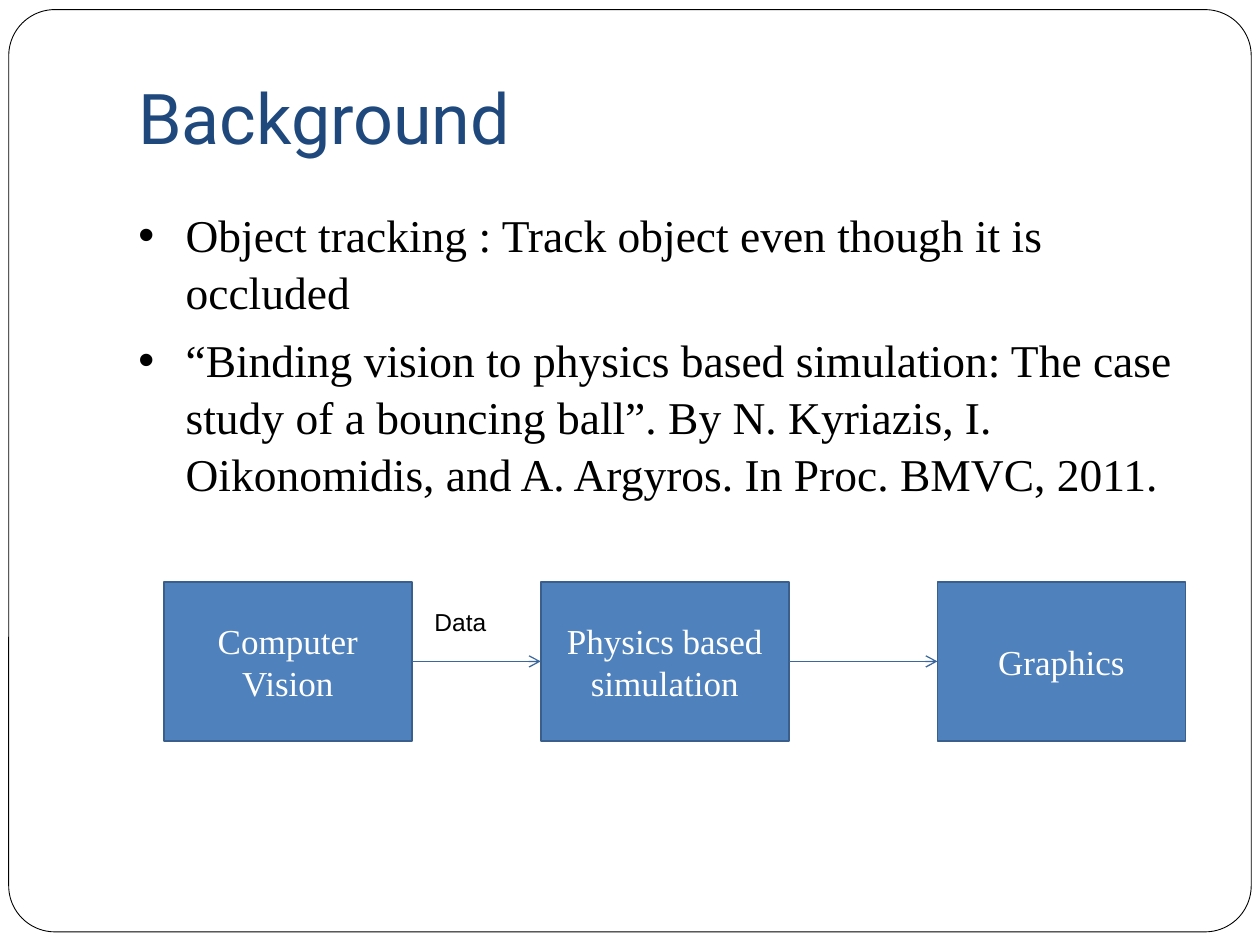
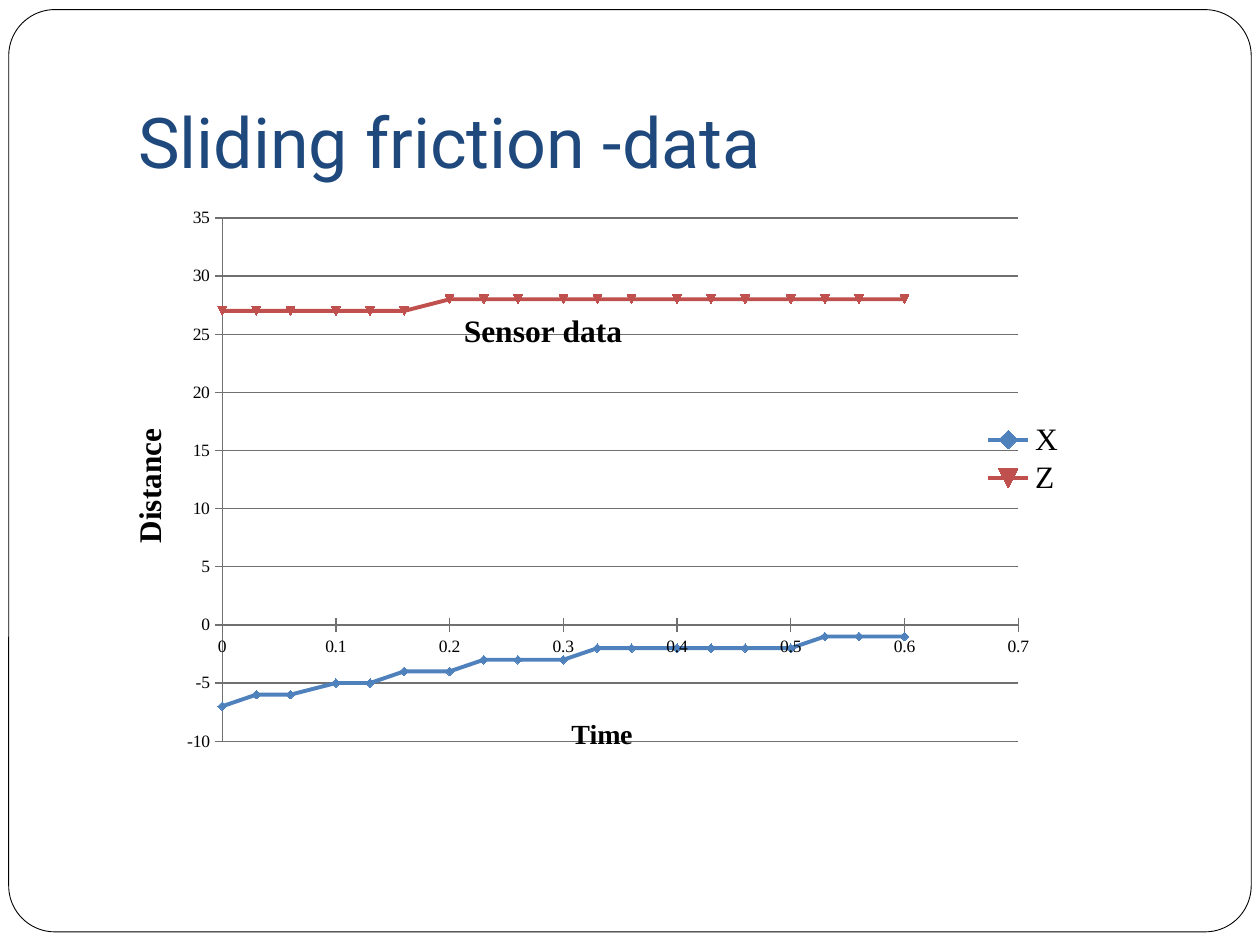
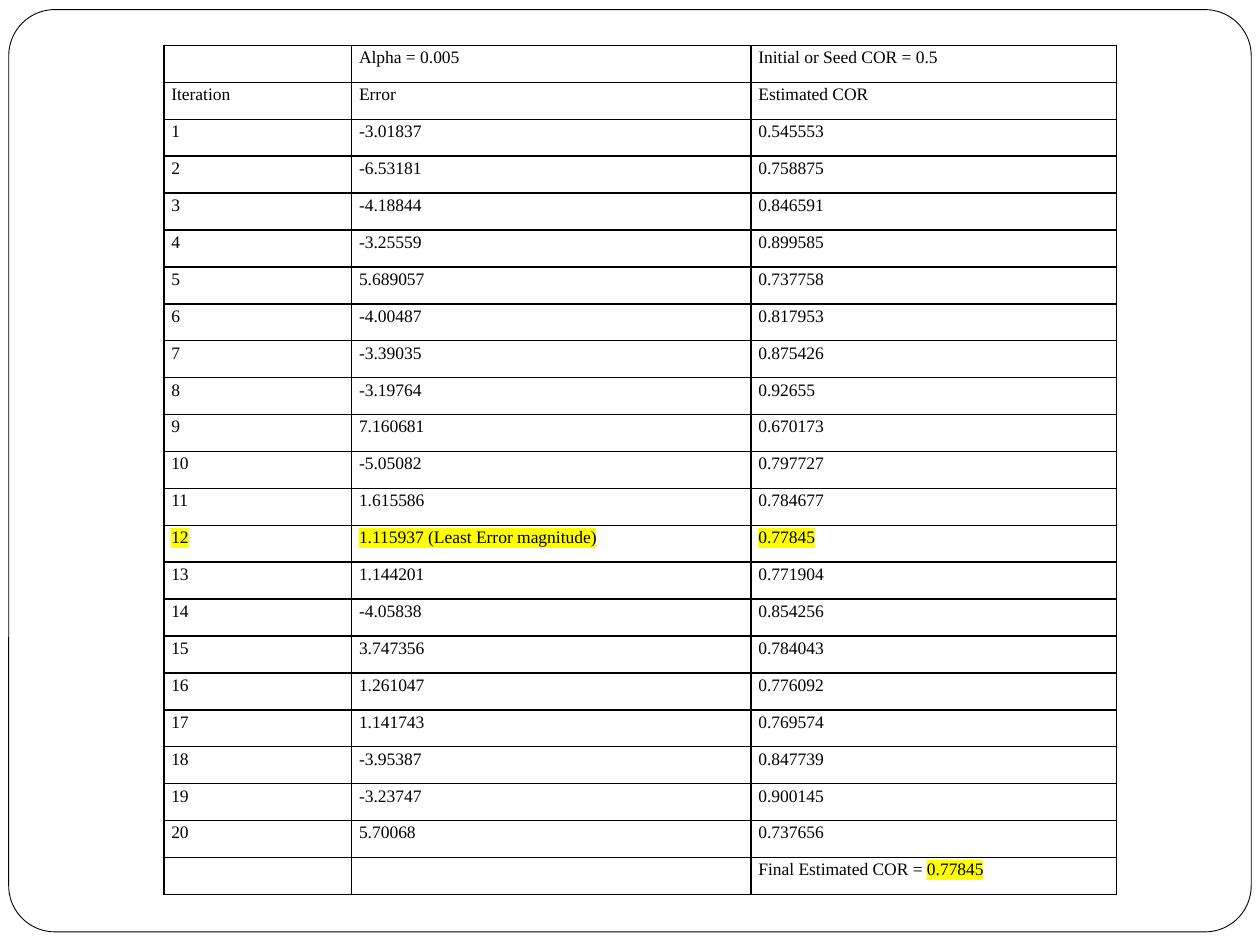
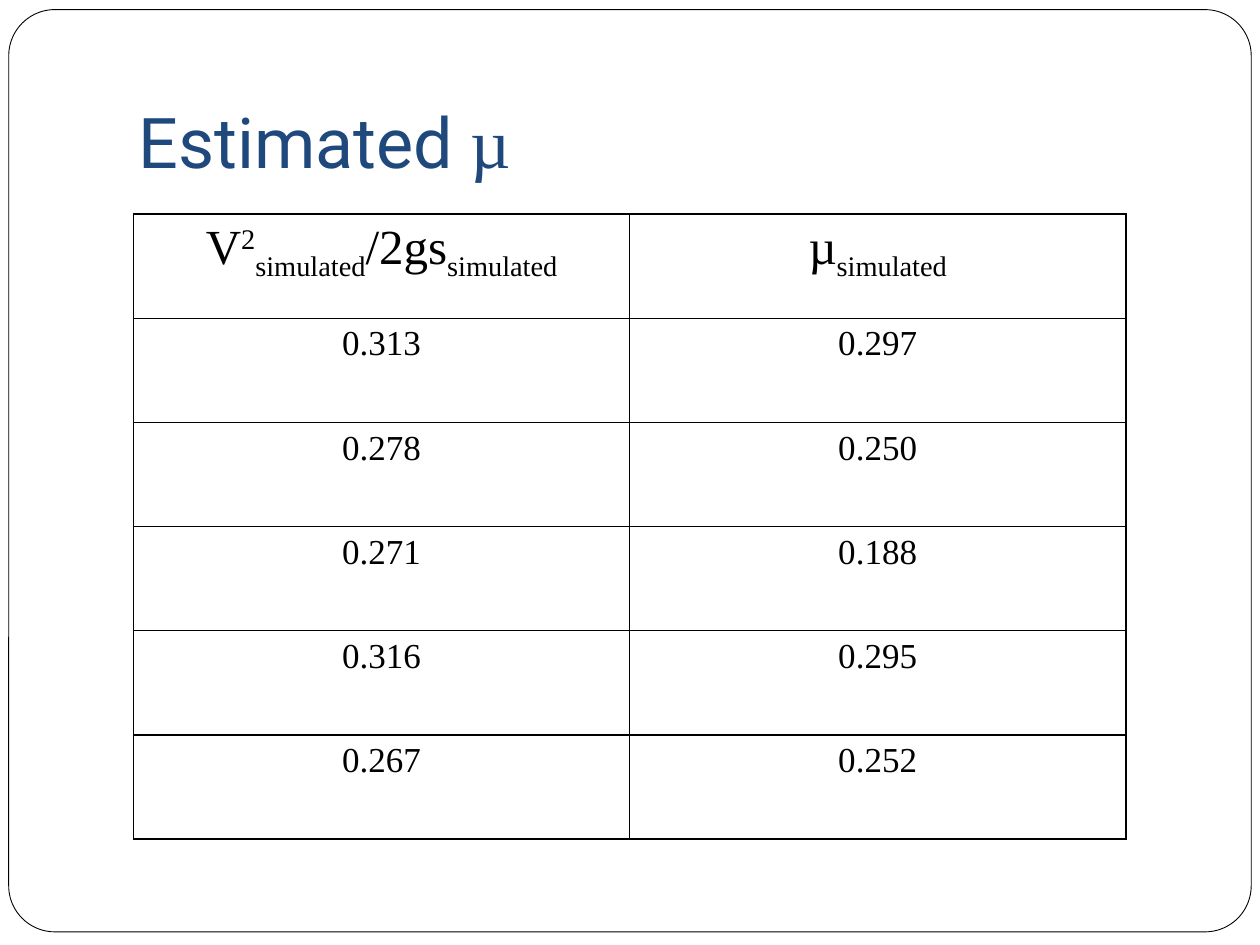
"""Build four slides on object tracking, sliding friction and estimated values."""
from lxml import etree
from pptx import Presentation
from pptx import util as u
from pptx.chart import data as cd
from pptx.dml.color import RGBColor
from pptx.enum import chart as ec, shapes, text
from pptx.oxml import ns

Pt = u.Pt
HUE = {"ink": "000000", "page": "FFFFFF", "title": "1F497D", "box": "4F81BD", "edge": "3A5F8C",
       "arrow": "3B679C", "grid": "707070", "x": "4F81BD", "z": "C0504D", "mark": "FFFF00"}
HUE = {key: RGBColor.from_string(val) for key, val in HUE.items()}
SERIF = "Times New Roman"


def style(font, size, hue="ink", name=SERIF):
    """Set size, colour and face of a font."""
    font.size = Pt(size)
    font.color.rgb = HUE[hue]
    font.name = name


def grid(slide, left, top, cols, high, rows, size):
    """Add a ruled table; a bar in a cell's text parts its runs."""
    table = slide.shapes.add_table(len(rows), len(cols), Pt(left), Pt(top),
                                   Pt(sum(cols)), Pt(high * len(rows))).table
    table.first_row = table.horz_banding = False
    for col, wide in zip(table.columns, cols):
        col.width = Pt(wide)
    for row, vals in zip(table.rows, rows):
        row.height = Pt(high)
        for cell, val in zip(row.cells, vals):
            para = cell.text_frame.paragraphs[0]
            for part in val.split("|") if val else []:
                run = para.add_run()
                run.text = part
                style(run.font, size)
            if not val:
                etree.SubElement(para._p, ns.qn("a:endParaRPr"), sz=str(size * 100))
            props = cell._tc.get_or_add_tcPr()
            for side in "LRTB":
                line = etree.SubElement(props, ns.qn("a:ln" + side), w="12700")
                fill = etree.SubElement(line, ns.qn("a:solidFill"))
                etree.SubElement(fill, ns.qn("a:srgbClr"), val=str(HUE["ink"]))
            cell.fill.background()
    return table


prs = Presentation()
prs.slide_width, prs.slide_height = Pt(720), Pt(540)
pages = []
for head, anchor, foot in [("Background", text.MSO_ANCHOR.MIDDLE, 3.6),
                           ("Sliding friction -data", text.MSO_ANCHOR.BOTTOM, 7.2),
                           (None, None, None),
                           ("Estimated |µ", text.MSO_ANCHOR.BOTTOM, 7.2)]:
    slide = prs.slides.add_slide(prs.slide_layouts[6])
    pages.append(slide)
    frame = slide.shapes.add_shape(shapes.MSO_SHAPE.ROUNDED_RECTANGLE,
                                   Pt(5), Pt(5.5), Pt(710), Pt(527))
    frame.adjustments[0] = 0.05
    frame.shadow.inherit = False
    frame.fill.solid()
    frame.fill.fore_color.rgb = HUE["page"]
    frame.line.color.rgb = HUE["ink"]
    frame.line.width = Pt(0.5)
    if head:
        body = slide.shapes.add_textbox(Pt(72), Pt(21.6), Pt(612), Pt(90)).text_frame
        body.word_wrap = True
        body.vertical_anchor = anchor
        body.margin_bottom = Pt(foot)
        for part, face in zip(head.split("|"), ["Roboto", SERIF]):
            run = body.paragraphs[0].add_run()
            run.text = part
            style(run.font, 40, "title", face)

track, slip, cor, mu = pages

body = track.shapes.add_textbox(Pt(72), Pt(113.8), Pt(612), Pt(360)).text_frame
body.word_wrap = True
body.text = ("Object tracking : Track object even though it is occluded\n"
             "“Binding vision to physics based simulation: The case study of a bouncing ball”. "
             "By N. Kyriazis, I. Oikonomidis, and A. Argyros. In Proc. BMVC, 2011.")
for num, para in enumerate(body.paragraphs):
    props = para._p.get_or_add_pPr()
    props.set("marL", str(Pt(27)))
    props.set("indent", str(-Pt(27)))
    etree.SubElement(props, ns.qn("a:buFont"), typeface="Arial")
    etree.SubElement(props, ns.qn("a:buChar"), char="•")
    para.line_spacing = 1.04
    if num:
        para.space_before = Pt(6.4)
    style(para.runs[0].font, 26)

boxes = []
for name, left in [("Computer Vision", 93.6), ("Physics based simulation", 309), ("Graphics", 535.7)]:
    box = track.shapes.add_shape(shapes.MSO_SHAPE.RECTANGLE, Pt(left), Pt(332.6), Pt(141.8), Pt(90.7))
    box.shadow.inherit = False
    box.fill.solid()
    box.fill.fore_color.rgb = HUE["box"]
    box.line.color.rgb = HUE["edge"]
    box.line.width = Pt(1)
    box.text_frame.text = name
    box.text_frame.vertical_anchor = text.MSO_ANCHOR.MIDDLE
    para = box.text_frame.paragraphs[0]
    para.alignment = text.PP_ALIGN.CENTER
    style(para.runs[0].font, 20, "page")
    boxes.append(box)
for one, two in zip(boxes, boxes[1:]):
    link = track.shapes.add_connector(shapes.MSO_CONNECTOR.STRAIGHT, 0, 0, 0, 0)
    link.begin_connect(one, 3)
    link.end_connect(two, 1)
    link.line.color.rgb = HUE["arrow"]
    link.line.width = Pt(0.75)
    etree.SubElement(link.line._get_or_add_ln(), ns.qn("a:tailEnd"), type="arrow")
    etree.SubElement(link._element.spPr, ns.qn("a:effectLst"))
note = track.shapes.add_textbox(Pt(241.2), Pt(343.4), Pt(67.7), Pt(24.5)).text_frame
note.word_wrap = True
note.text = "Data"
style(note.paragraphs[0].runs[0].font, 14, "ink", "Arial")

times = [0, 0.03, 0.06, 0.1, 0.13, 0.16, 0.2, 0.23, 0.26, 0.3,
         0.33, 0.36, 0.4, 0.43, 0.46, 0.5, 0.53, 0.56, 0.6]
stats = cd.XyChartData()
for name, vals in [("X", [-7, -6, -6, -5, -5, -4, -4] + [-3] * 3 + [-2] * 6 + [-1] * 3),
                   ("Z", [27] * 6 + [28] * 13)]:
    row = stats.add_series(name)
    for time, val in zip(times, vals):
        row.add_data_point(time, val)
chart = slip.shapes.add_chart(ec.XL_CHART_TYPE.XY_SCATTER_SMOOTH, Pt(54), Pt(94.3),
                              Pt(561.6), Pt(339.8), stats).chart
style(chart.font, 10)
plot = chart.plots[0]
plot.vary_by_categories = False
for row, hue in zip(plot.series, ["x", "z"]):
    row.smooth = True
    row.format.line.color.rgb = HUE[hue]
    row.format.line.width = Pt(2.25)
    row.marker.size = 5
    row.marker.format.fill.solid()
    row.marker.format.fill.fore_color.rgb = HUE[hue]
    row.marker.format.line.color.rgb = HUE[hue]
across, up = chart.category_axis, chart.value_axis
for axis, low, top, step in [(across, 0, 0.7, 0.1), (up, -10, 35, 5)]:
    axis.minimum_scale, axis.maximum_scale, axis.major_unit = low, top, step
    axis.major_tick_mark = ec.XL_TICK_MARK.CROSS
    axis.format.line.color.rgb = HUE["grid"]
across.has_major_gridlines = False
up.has_major_gridlines = True
up.major_gridlines.format.line.color.rgb = HUE["grid"]
chart.has_legend = True
chart.legend.position = ec.XL_LEGEND_POSITION.RIGHT
chart.legend.include_in_layout = False
style(chart.legend.font, 18)
for part, name, size in [(chart, "Sensor data", 18), (across, "Time", 16), (up, "Distance", 18)]:
    title = part.chart_title if part is chart else part.axis_title
    title.text_frame.text = name
    font = title.text_frame.paragraphs[0].runs[0].font
    style(font, size)
    font.bold = True
chart.chart_title.include_in_layout = True

area = chart._chartSpace.chart.plotArea
for node, spot in [(area, (0.13, 0.09, 0.81, 0.89)),
                   (chart.chart_title._element, (0.37, 0.24)),
                   (across.axis_title._element, (0.48, 0.93)),
                   (up.axis_title._element, (0.03, 0.44)),
                   (chart.legend._element, (0.89, 0.43, 0.11, 0.14))]:
    for old in node.findall(ns.qn("c:layout")):
        node.remove(old)
    lay = etree.Element(ns.qn("c:layout"))
    man = etree.SubElement(lay, ns.qn("c:manualLayout"))
    if node is area:
        etree.SubElement(man, ns.qn("c:layoutTarget"), val="inner")
    for tag in ("xMode", "yMode"):
        etree.SubElement(man, ns.qn("c:" + tag), val="edge")
    for tag, val in zip("xywh", spot):
        etree.SubElement(man, ns.qn("c:" + tag), val=str(val))
    node.insert(0 if node is area else 1, lay)

errors = """-3.01837 -6.53181 -4.18844 -3.25559 5.689057 -4.00487 -3.39035 -3.19764 7.160681 -5.05082
1.615586 1.115937 1.144201 -4.05838 3.747356 1.261047 1.141743 -3.95387 -3.23747 5.70068""".split()
guess = """0.545553 0.758875 0.846591 0.899585 0.737758 0.817953 0.875426 0.92655 0.670173 0.797727
0.784677 0.77845 0.771904 0.854256 0.784043 0.776092 0.769574 0.847739 0.900145 0.737656""".split()
errors[11] += " (Least Error magnitude)"
rows = [("", "Alpha = 0.005", "Initial or Seed COR = 0.5"), ("Iteration", "Error", "Estimated COR")]
rows += [(str(num), *pair) for num, pair in enumerate(zip(errors, guess), 1)]
rows.append(("", "", "Final Estimated COR = |0.77845"))
table = grid(cor, 93.6, 26, [107.3, 228.2, 208.8], 21.1, rows, 10)
for cell in table.iter_cells():
    cell.margin_left = cell.margin_right = Pt(4.3)
    cell.margin_top = cell.margin_bottom = 0
    cell.text_frame.paragraphs[0].line_spacing = 1.15
for row, col in [(13, 0), (13, 1), (13, 2), (22, 2)]:
    run = table.cell(row, col).text_frame.paragraphs[0].runs[-1]
    mark = etree.Element(ns.qn("a:highlight"))
    etree.SubElement(mark, ns.qn("a:srgbClr"), val=str(HUE["mark"]))
    run._r.rPr.find(ns.qn("a:solidFill")).addnext(mark)

rows = [("V|2|simulated|/2gs|simulated", "µ|simulated"), ("0.313", "0.297"), ("0.278", "0.250"),
        ("0.271", "0.188"), ("0.316", "0.295"), ("0.267", "0.252")]
table = grid(mu, 76.3, 122.4, [283.5, 283.5], 59.5, rows, 20)
for cell in table.iter_cells():
    cell.text_frame.paragraphs[0].alignment = text.PP_ALIGN.CENTER
for col, shifts in enumerate([(0, 30, -25, 0, -25), (0, -25)]):
    for run, shift in zip(table.cell(0, col).text_frame.paragraphs[0].runs, shifts):
        run.font.size = Pt(28)
        if shift:
            run._r.rPr.set("baseline", str(shift * 1000))

prs.save("out.pptx")
